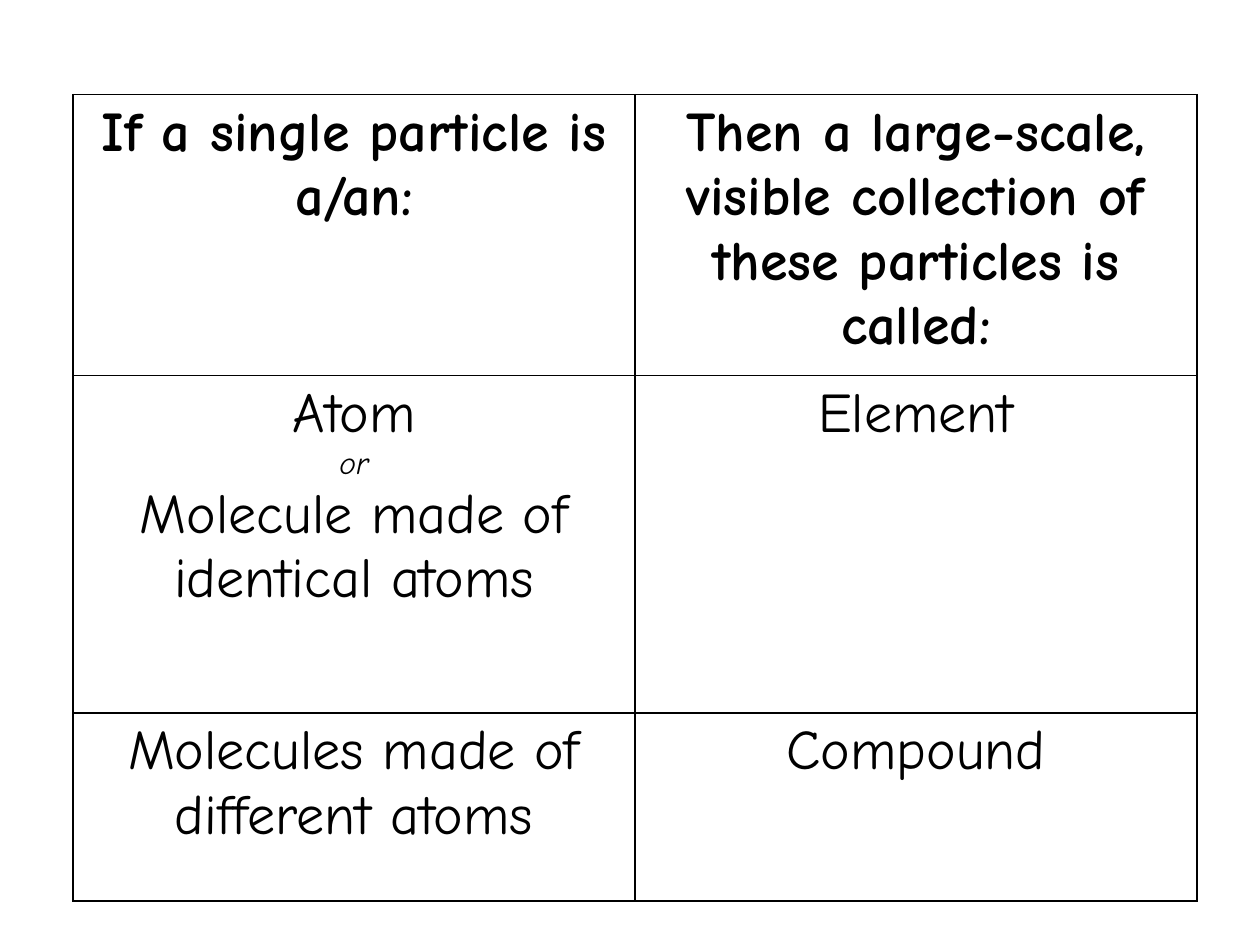
from dataclasses import dataclass

from lxml import etree
from pptx import Presentation
from pptx import util as u
from pptx.dml import color
from pptx.enum import text
from pptx.oxml import ns


@dataclass(frozen=True)
class Theme:
    font: str = "Comic Neue"
    ink: str = "000000"
    body_size: int = 32
    link_word_size: int = 18
    border_width: int = 1


THEME = Theme()
LINK_WORD = "or"
PARTICLE_ROWS = [
    ("If a single particle is a/an:",
     "Then a large-scale, visible collection of these particles is called:"),
    (f"Atom\n{LINK_WORD}\nMolecule made of identical atoms", "Element"),
    ("Molecules made of different atoms", "Compound"),
]
ROW_HEIGHTS = (2.23, 2.68, 1.49)


def draw_borders(cell):
    properties = cell._tc.get_or_add_tcPr()
    for position, side in enumerate(("lnL", "lnR", "lnT", "lnB")):
        border = etree.Element(ns.qn(f"a:{side}"), w=str(u.Pt(THEME.border_width)))
        fill = etree.SubElement(border, ns.qn("a:solidFill"))
        etree.SubElement(fill, ns.qn("a:srgbClr"), val=THEME.ink)
        properties.insert(position, border)


def fill_cell(cell, wording, is_heading):
    cell.fill.background()
    draw_borders(cell)
    cell.text_frame.text = wording
    for paragraph in cell.text_frame.paragraphs:
        paragraph.alignment = text.PP_ALIGN.CENTER
        is_link_word = paragraph.text == LINK_WORD
        for run in paragraph.runs:
            run.font.name = THEME.font
            run.font.size = u.Pt(THEME.link_word_size if is_link_word else THEME.body_size)
            run.font.color.rgb = color.RGBColor.from_string(THEME.ink)
            run.font.bold = is_heading
            run.font.italic = is_link_word


def add_particle_table(slide, left, top, width, height):
    column_count = len(PARTICLE_ROWS[0])
    particles = slide.shapes.add_table(
        len(PARTICLE_ROWS), column_count, left, top, width, height).table
    particles.first_row = False
    particles.horz_banding = False
    for column in particles.columns:
        column.width = width // column_count
    for row, row_height, wordings in zip(particles.rows, ROW_HEIGHTS, PARTICLE_ROWS):
        row.height = u.Inches(row_height)
        for cell, wording in zip(row.cells, wordings):
            fill_cell(cell, wording, is_heading=wordings is PARTICLE_ROWS[0])


def main():
    deck = Presentation()
    deck.slide_width, deck.slide_height = u.Inches(10), u.Inches(7.5)
    slide = deck.slides.add_slide(deck.slide_layouts[6])
    add_particle_table(slide, u.Inches(0.58), u.Inches(0.75),
                       u.Inches(8.92), u.Inches(sum(ROW_HEIGHTS)))
    deck.save("out.pptx")


if __name__ == "__main__":
    main()
